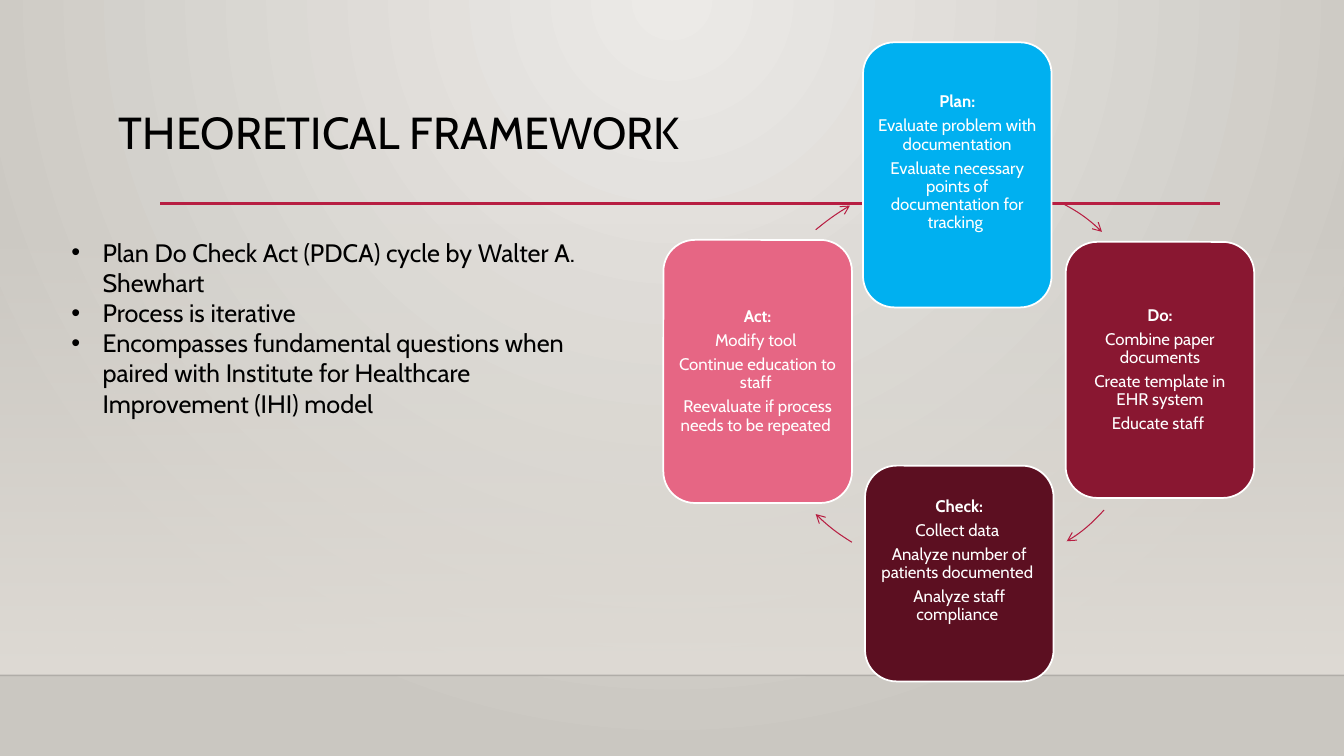
from typing import NamedTuple

from lxml.etree import SubElement
from pptx import Presentation
from pptx.dml.color import RGBColor
from pptx.enum.shapes import MSO_CONNECTOR, MSO_SHAPE
from pptx.enum.text import MSO_ANCHOR, MSO_AUTO_SIZE, PP_ALIGN
from pptx.oxml.ns import qn
from pptx.util import Inches, Pt

FONT = "Cabin"
BLACK = RGBColor(0x00, 0x00, 0x00)
WHITE = RGBColor(0xFF, 0xFF, 0xFF)
CRIMSON = RGBColor(0xB7, 0x1E, 0x42)
BLUE = RGBColor(0x00, 0xB0, 0xF0)
WINE = RGBColor(0x89, 0x17, 0x31)
DARK_WINE = RGBColor(0x5C, 0x0F, 0x21)
PINK = RGBColor(0xE6, 0x66, 0x84)
WALL = RGBColor(0xDF, 0xDB, 0xD5)
BG_LIGHT = RGBColor(0xEC, 0xEA, 0xE7)
BG_DARK = RGBColor(0xCA, 0xC7, 0xC1)

CARD_WIDTH = 1.87
CYCLE_SIZE = 4.01


class Stage(NamedTuple):
    name: str
    tasks: tuple[str, ...]
    left: float
    top: float
    height: float
    color: RGBColor
    bottom_inset: float = 0.05


class Arrow(NamedTuple):
    """Frame corner and cubic curve points, in inches on the slide."""
    left: float
    top: float
    start: tuple[float, float]
    curve: tuple[tuple[float, float], ...]


STAGES = [
    Stage("Plan:", ("Evaluate problem with documentation",
                    "Evaluate necessary points of documentation for tracking "),
          8.56, 0.42, 2.63, BLUE, 0.29),
    Stage("Do:", ("Combine paper documents", "Create template in EHR system",
                  "Educate staff "),
          10.57, 2.4, 2.54, WINE),
    Stage("Check:", ("Collect data ", "Analyze number of patients documented ",
                     "Analyze staff compliance "),
          8.58, 4.62, 2.14, DARK_WINE, 0.29),
    Stage("Act:", ("Modify tool ", "Continue education to staff ",
                   "Reevaluate if process needs to be repeated "),
          6.58, 2.38, 2.61, PINK),
]
ARROWS = [
    Arrow(7.58, 1.77, (10.56, 2.03), ((10.69, 2.1), (10.82, 2.19), (10.93, 2.3))),
    Arrow(7.49, 1.69, (10.95, 5.06), ((10.84, 5.18), (10.72, 5.29), (10.58, 5.37))),
    Arrow(7.51, 1.68, (8.45, 5.38), ((8.32, 5.3), (8.2, 5.21), (8.09, 5.1))),
    Arrow(7.4, 1.79, (8.09, 2.28), ((8.2, 2.19), (8.31, 2.11), (8.43, 2.04))),
]
BULLETS = [
    "Plan Do Check Act (PDCA) cycle by Walter A. Shewhart",
    "Process is iterative",
    "Encompasses fundamental questions when paired with Institute for "
    "Healthcare Improvement (IHI) model",
]


def add_run(p, text: str, size: float, color: RGBColor, bold: bool = False) -> None:
    r = p.add_run()
    r.text = text
    r.font.name = FONT
    r.font.size = Pt(size)
    r.font.bold = bold
    r.font.color.rgb = color


def set_gradient(fill, first: RGBColor, last: RGBColor) -> None:
    fill.gradient()
    for stop, color in zip(fill.gradient_stops, (first, last)):
        stop.color.rgb = color


def set_alpha(sp, percent: int) -> None:
    """Make the first colour of a shape or line see-through."""
    color = next(sp.element.spPr.iter(qn("a:srgbClr")))
    SubElement(color, qn("a:alpha"), val=str(percent * 1000))


def add_rule(s, left: float, right: float, y: float, color: RGBColor, width: float):
    line = s.shapes.add_connector(MSO_CONNECTOR.STRAIGHT, Inches(left), Inches(y),
                                  Inches(right), Inches(y))
    line.line.color.rgb = color
    line.line.width = Pt(width)
    SubElement(line.element.spPr, qn("a:effectLst"))
    return line


def add_backdrop(s) -> None:
    set_gradient(s.background.fill, BG_LIGHT, BG_DARK)
    grad = next(s.element.iter(qn("a:gradFill")))
    grad.remove(grad.find(qn("a:lin")))
    glow = SubElement(grad, qn("a:path"), path="circle")
    SubElement(glow, qn("a:fillToRect"), l="43000", t="0", r="43000", b="100000")

    wall = s.shapes.add_shape(MSO_SHAPE.RECTANGLE, 0, Inches(2.21),
                              Inches(13.33), Inches(4.49))
    wall.shadow.inherit = False
    wall.line.fill.background()
    set_gradient(wall.fill, WALL, WALL)
    wall.fill.gradient_angle = 270
    set_alpha(wall, 0)

    set_alpha(add_rule(s, 0, 13.33, 6.7, BLACK, 1), 20)
    add_rule(s, 1.59, 12.1, 2.02, CRIMSON, 2.5)


def add_title(s, text: str) -> None:
    title = s.shapes.title
    title.left, title.top = Inches(0.88), Inches(1.05)
    title.width, title.height = Inches(6.91), Inches(0.93)
    tf = title.text_frame
    tf.auto_size = MSO_AUTO_SIZE.NONE
    tf.vertical_anchor = MSO_ANCHOR.TOP
    tf.margin_left = Inches(0.3)
    p = tf.paragraphs[0]
    p.alignment = PP_ALIGN.LEFT
    p.line_spacing = 0.9
    add_run(p, text, 32, BLACK)


def add_stage(s, stage: Stage) -> None:
    sp = s.shapes.add_shape(MSO_SHAPE.ROUNDED_RECTANGLE, Inches(stage.left),
                            Inches(stage.top), Inches(CARD_WIDTH), Inches(stage.height))
    sp.shadow.inherit = False
    sp.fill.solid()
    sp.fill.fore_color.rgb = stage.color
    sp.line.color.rgb = WHITE
    sp.line.width = Pt(1.25)
    tf = sp.text_frame
    tf.word_wrap = True
    tf.vertical_anchor = MSO_ANCHOR.MIDDLE
    tf.margin_left = tf.margin_right = tf.margin_top = Inches(0.05)
    tf.margin_bottom = Inches(stage.bottom_inset)
    for i, text in enumerate((stage.name, *stage.tasks)):
        p = tf.add_paragraph() if i else tf.paragraphs[0]
        p.alignment = PP_ALIGN.CENTER
        p.line_spacing = 0.9
        p.space_after = Pt(4.2)
        add_run(p, text, 12, WHITE, bold=i == 0)


def add_arrow(s, arrow: Arrow) -> None:
    builder = s.shapes.build_freeform(Inches(arrow.left), Inches(arrow.top))
    corner = (Inches(arrow.left + CYCLE_SIZE), Inches(arrow.top + CYCLE_SIZE))
    builder.add_line_segments([corner], close=False)
    sp = builder.convert_to_shape()
    sp.shadow.inherit = False
    sp.fill.background()
    sp.line.color.rgb = CRIMSON
    sp.line.width = Pt(0.75)
    SubElement(sp.element.spPr.find(qn("a:ln")), qn("a:tailEnd"), type="arrow")

    # The frame spans the whole cycle; the outline is one curve inside it
    outline = next(sp.element.iter(qn("a:path")))
    for segment in list(outline):
        outline.remove(segment)
    for tag, points in (("a:moveTo", (arrow.start,)), ("a:cubicBezTo", arrow.curve)):
        segment = SubElement(outline, qn(tag))
        for x, y in points:
            SubElement(segment, qn("a:pt"), x=str(Inches(x - arrow.left)),
                       y=str(Inches(y - arrow.top)))


def add_bullets(s, items: list[str]) -> None:
    box = s.shapes.add_textbox(Inches(0.61), Inches(2.3), Inches(5.56), Inches(1.92))
    tf = box.text_frame
    tf.word_wrap = True
    for i, text in enumerate(items):
        p = tf.add_paragraph() if i else tf.paragraphs[0]
        pPr = p._p.get_or_add_pPr()
        pPr.set("marL", str(Inches(0.31)))
        pPr.set("indent", str(Inches(-0.31)))
        SubElement(pPr, qn("a:buFont"), typeface="Arial")
        SubElement(pPr, qn("a:buChar"), char="•")
        add_run(p, text, 18, BLACK)


def main() -> None:
    prs = Presentation()
    prs.slide_width, prs.slide_height = Inches(13.33), Inches(7.5)
    s = prs.slides.add_slide(prs.slide_layouts[5])

    # Backdrop and heading
    add_backdrop(s)
    add_title(s, "THEORETICAL FRAMEWORK")

    # PDCA cycle
    for stage, arrow in zip(STAGES, ARROWS):
        add_stage(s, stage)
        add_arrow(s, arrow)

    # Key points
    add_bullets(s, BULLETS)
    prs.save("out.pptx")


if __name__ == "__main__":
    main()
